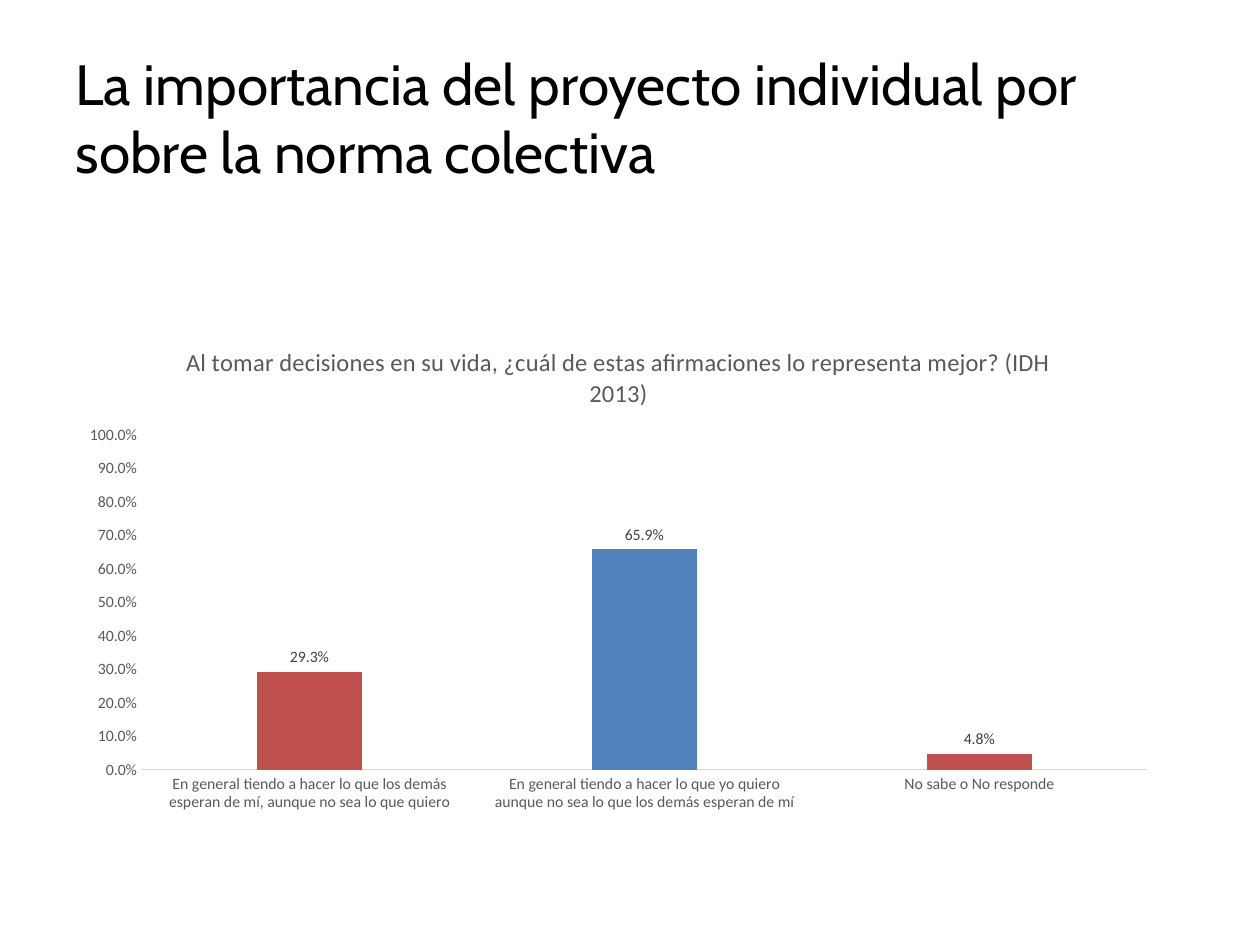
"""Build a slide with a title and a column chart of survey answers."""
from dataclasses import dataclass

from lxml.etree import SubElement
from pptx import Presentation
from pptx.chart.data import CategoryChartData
from pptx.dml.color import RGBColor
from pptx.enum.chart import XL_CHART_TYPE, XL_LABEL_POSITION, XL_TICK_MARK
from pptx.enum.text import MSO_ANCHOR, PP_ALIGN
from pptx.oxml.ns import qn
from pptx.util import Pt

TITLE = "La importancia del proyecto individual por sobre la norma colectiva"
QUESTION = ("Al tomar decisiones en su vida, ¿cuál de estas afirmaciones "
            "lo representa mejor? (IDH 2013)")
ANSWERS = [
    ("En general tiendo a hacer lo que los demás esperan de mí, "
     "aunque no sea lo que quiero", 0.293),
    ("En general tiendo a hacer lo que yo quiero "
     "aunque no sea lo que los demás esperan de mí", 0.659),
    ("No sabe o No responde", 0.048),
]
HIGHLIGHTED_ANSWER = 1
PERCENT = "0.0%"

EMU_PER_PX = 914400 // 126
SLIDE_SIZE = (1260, 945)
TITLE_BOX = (63, 38, 1134, 157)
CHART_BOX = (68, 324, 1101, 517)
PLOT_BOX = (142, 435, 1005, 335)


@dataclass(frozen=True)
class Theme:
    title_font: str = "Cabin"
    chart_font: str = "Calibri"
    title_size: float = 32.4
    question_size: int = 14
    label_size: int = 9
    black: str = "000000"
    axis_text: str = "595959"
    value_text: str = "404040"
    axis_line: str = "D9D9D9"
    bar: str = "C0504D"
    highlighted_bar: str = "4F81BD"


THEME = Theme()


def px(lengths):
    return [length * EMU_PER_PX for length in lengths]


def style_font(font, name, size, color):
    font.name = name
    font.size = Pt(size)
    font.bold = False
    font.color.rgb = RGBColor.from_string(color)


def fill_solid(fill, color):
    fill.solid()
    fill.fore_color.rgb = RGBColor.from_string(color)


def add_title(slide):
    title = slide.shapes.title
    title.left, title.top, title.width, title.height = px(TITLE_BOX)
    frame = title.text_frame
    frame.text = TITLE
    frame.word_wrap = True
    frame.vertical_anchor = MSO_ANCHOR.MIDDLE
    paragraph = frame.paragraphs[0]
    paragraph.alignment = PP_ALIGN.LEFT
    style_font(paragraph.runs[0].font, THEME.title_font, THEME.title_size, THEME.black)


def place_plot(chart):
    plot_area = chart._chartSpace.chart.plotArea
    layout = plot_area.find(qn("c:layout"))
    if layout is None:
        layout = SubElement(plot_area, qn("c:layout"))
        plot_area.insert(0, layout)
    manual = SubElement(layout, qn("c:manualLayout"))
    left, top, width, height = CHART_BOX
    plot_left, plot_top, plot_width, plot_height = PLOT_BOX
    settings = {
        "layoutTarget": "inner", "xMode": "edge", "yMode": "edge",
        "x": round((plot_left - left) / width, 4),
        "y": round((plot_top - top) / height, 4),
        "w": round(plot_width / width, 4),
        "h": round(plot_height / height, 4),
    }
    for name, value in settings.items():
        SubElement(manual, qn(f"c:{name}")).set("val", str(value))


def style_axes(chart):
    for axis in (chart.category_axis, chart.value_axis):
        axis.major_tick_mark = axis.minor_tick_mark = XL_TICK_MARK.NONE
        axis.has_major_gridlines = False
        style_font(axis.tick_labels.font, THEME.chart_font, THEME.label_size, THEME.axis_text)
    line = chart.category_axis.format.line
    fill_solid(line.fill, THEME.axis_line)
    line.width = Pt(0.75)
    values = chart.value_axis
    values.format.line.fill.background()
    values.minimum_scale, values.maximum_scale, values.major_unit = 0, 1, 0.1
    values.tick_labels.number_format = PERCENT
    values.tick_labels.number_format_is_linked = False


def style_bars(plot):
    plot.gap_width = 219
    plot.overlap = -27
    plot.vary_by_categories = False
    series = plot.series[0]
    series.invert_if_negative = False
    fill_solid(series.format.fill, THEME.highlighted_bar)
    for index in range(len(ANSWERS)):
        if index != HIGHLIGHTED_ANSWER:
            fill_solid(series.points[index].format.fill, THEME.bar)
    labels = series.data_labels
    labels.show_value = True
    labels.position = XL_LABEL_POSITION.OUTSIDE_END
    labels.number_format = PERCENT
    labels.number_format_is_linked = False
    style_font(labels.font, THEME.chart_font, THEME.label_size, THEME.value_text)


def add_answer_chart(slide):
    data = CategoryChartData(number_format=PERCENT)
    data.categories = [answer for answer, share in ANSWERS]
    data.add_series("Series 1", [share for answer, share in ANSWERS])
    chart = slide.shapes.add_chart(
        XL_CHART_TYPE.COLUMN_CLUSTERED, *px(CHART_BOX), data).chart
    chart.has_legend = False
    style_font(chart.font, THEME.chart_font, 10, THEME.black)
    chart.has_title = True
    chart.chart_title.include_in_layout = False
    frame = chart.chart_title.text_frame
    frame.text = QUESTION
    style_font(frame.paragraphs[0].runs[0].font, THEME.chart_font,
               THEME.question_size, THEME.axis_text)
    place_plot(chart)
    style_axes(chart)
    style_bars(chart.plots[0])


def main():
    presentation = Presentation()
    presentation.slide_width, presentation.slide_height = px(SLIDE_SIZE)
    slide = presentation.slides.add_slide(presentation.slide_layouts[5])
    add_title(slide)
    add_answer_chart(slide)
    presentation.save("out.pptx")


if __name__ == "__main__":
    main()
